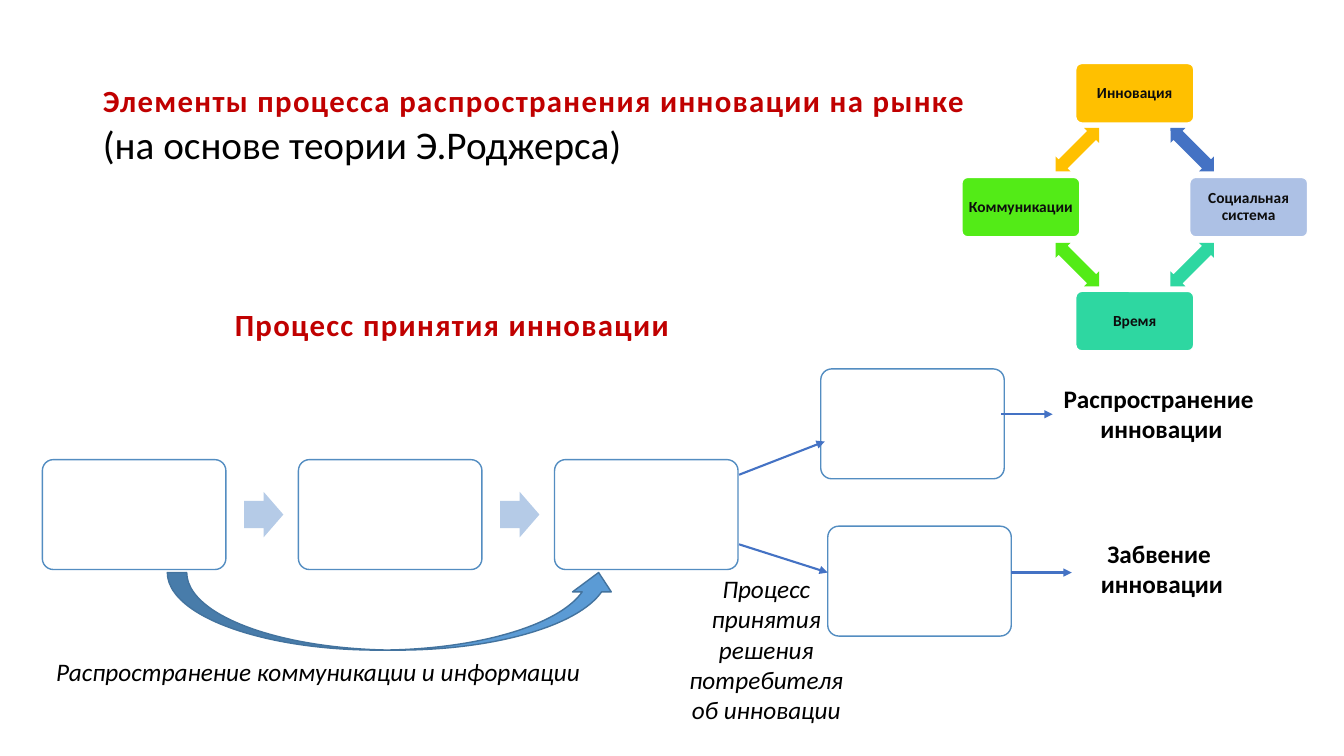
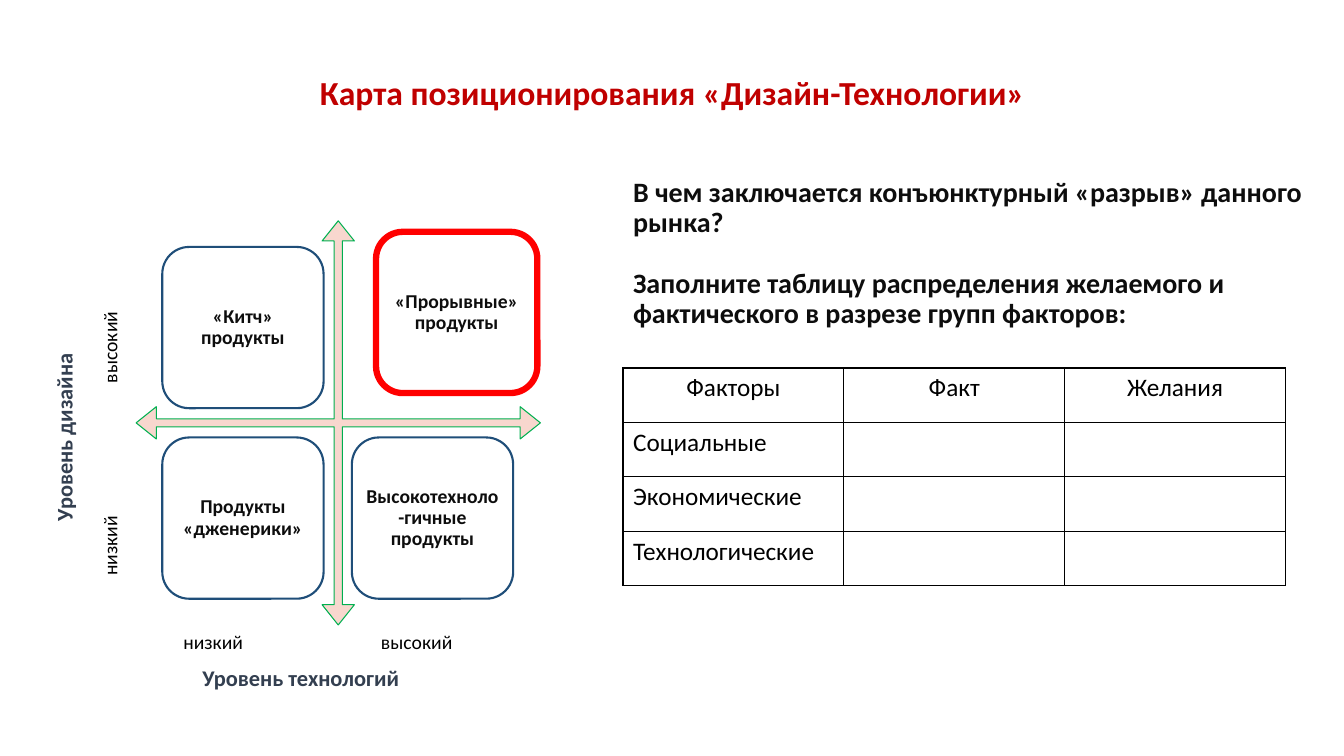
from lxml import etree
from pptx import Presentation
from pptx.dml.color import RGBColor
from pptx.enum.shapes import MSO_CONNECTOR, MSO_SHAPE as SHAPE
from pptx.enum.text import MSO_ANCHOR as ANCHOR, MSO_AUTO_SIZE, PP_ALIGN as ALIGN
from pptx.oxml import parse_xml
from pptx.oxml.ns import nsdecls, qn
from pptx.util import Pt

PX = 9144  # 100 px to the inch
FONT = "Calibri"
COLORS = {
    "title": "C00000", "black": "000000", "ink": "0D0D0D", "axis": "333F50",
    "white": "FFFFFF", "yellow": "FFC000", "lime": "53EB17", "teal": "2ED7A1",
    "lilac": "ADC1E5", "blue": "4472C4", "step": "538DC1", "step_arrow": "B5CBE7",
    "curve": "5B9BD5", "curve_line": "43739E", "cross": "F8D7CE", "green": "00B050",
    "navy": "1F4E79", "red": "FF0000",
}
TITLE_BOX = (92, 40, 1150, 145)


def write(text_frame, texts, size, color="black", bold=False, italic=False,
          align=ALIGN.LEFT, line_spacing=None, gap=0, spacing=0):
    """Put one paragraph per text into the frame and format it."""
    text_frame.text = "\n".join(texts)
    for index, paragraph in enumerate(text_frame.paragraphs):
        paragraph.alignment = align
        if line_spacing:
            paragraph.line_spacing = line_spacing
        if index and gap:
            paragraph.space_before = Pt(gap)
        for run in paragraph.runs:
            font = run.font
            font.name, font.size, font.bold, font.italic = FONT, Pt(size), bold, italic
            font.color.rgb = RGBColor.from_string(COLORS[color])
            if spacing:
                run._r.get_or_add_rPr().set("spc", str(spacing))


def add_block(slide, kind, box, fill=None, line=None, width=1, adjustments=(), rotation=0):
    shape = slide.shapes.add_shape(kind, *[value * PX for value in box])
    shape.shadow.inherit = False
    shape.rotation = rotation
    for index, value in enumerate(adjustments):
        shape.adjustments[index] = value
    if fill:
        shape.fill.solid()
        shape.fill.fore_color.rgb = RGBColor.from_string(COLORS[fill])
    else:
        shape.fill.background()
    if line:
        shape.line.color.rgb = RGBColor.from_string(COLORS[line])
        shape.line.width = Pt(width)
    else:
        shape.line.fill.background()
    return shape


presentation = Presentation()
presentation.slide_width, presentation.slide_height = 1333 * PX, 750 * PX

# Both slides share the title frame
slides = []
for number in range(2):
    slide = presentation.slides.add_slide(presentation.slide_layouts[5])
    title = slide.shapes.title
    title.left, title.top, title.width, title.height = [value * PX for value in TITLE_BOX]
    title.text_frame.vertical_anchor = ANCHOR.MIDDLE
    title.text_frame.word_wrap = True
    slides.append(slide)
diffusion, positioning = slides

# Slide 1: title with a smaller heading above a plain second line
title_frame = diffusion.shapes.title.text_frame
write(title_frame, ["Элементы процесса распространения инновации на рынке"], 22,
      "title", bold=True, line_spacing=0.9, spacing=100)
paragraph = title_frame.paragraphs[0]
for text, size in ((" ", 44), ("(на основе теории Э.Роджерса)", 28)):
    run = paragraph.add_run()
    run.text = text
    run.font.name, run.font.size = FONT, Pt(size)
    run.font.color.rgb = RGBColor.from_string(COLORS["black"])
    if text == " ":
        paragraph.add_line_break()

# Slide 1: cycle of four elements around a hub
HUB_X, HUB_Y, RADIUS = 1125, 205, 113
NODE_W, NODE_H = 117, 59
ARROW_W, ARROW_H = 61, 21
elements = [
    ("Инновация", "yellow", 0, -1),
    ("Коммуникации", "lime", -1, 0),
    ("Время", "teal", 0, 1),
    ("Социальная система", "lilac", 1, 0),
]
for text, color, x, y in elements:
    box = (HUB_X + x * RADIUS - NODE_W // 2, HUB_Y + y * RADIUS - NODE_H // 2, NODE_W, NODE_H)
    node = add_block(diffusion, SHAPE.ROUNDED_RECTANGLE, box, color, "white", 1, [0.1])
    frame = node.text_frame
    frame.margin_left = frame.margin_right = frame.margin_top = frame.margin_bottom = 4 * PX
    frame.word_wrap = True
    write(frame, [text], 11, "ink", bold=True, align=ALIGN.CENTER, line_spacing=0.9)
for color, x, y, rotation in (("yellow", -1, -1, 135), ("lime", -1, 1, 45),
                              ("teal", 1, 1, 315), ("blue", 1, -1, 225)):
    box = (HUB_X + x * 57 - ARROW_W // 2, HUB_Y + y * 57 - ARROW_H // 2, ARROW_W, ARROW_H)
    add_block(diffusion, SHAPE.LEFT_RIGHT_ARROW, box, color,
              adjustments=[0.6, 0.5], rotation=rotation)

# Slide 1: adoption steps, two outcomes and the arrows between steps
STEP_LEFT, STEP_TOP, STEP_PITCH = 42, 456, 254
step_places = [(STEP_LEFT + index * STEP_PITCH, STEP_TOP) for index in range(3)]
for left, top in step_places + [(814, 366), (821, 522)]:
    add_block(diffusion, SHAPE.ROUNDED_RECTANGLE, (left, top, 182, 109),
              "white", "step", 1, [0.1])
for left, top in step_places[:2]:
    add_block(diffusion, SHAPE.RIGHT_ARROW, (left + 200, top + 32, 39, 45),
              "step_arrow", adjustments=[0.6, 0.5])
add_block(diffusion, SHAPE.CURVED_UP_ARROW, (166, 568, 447, 77), "curve", "curve_line")

# Slide 1: thin arrows to the outcomes and their results
for ends in ((733, 471, 818, 438), (733, 540, 821, 568),
             (993, 411, 1044, 411), (1003, 568, 1063, 568)):
    connector = diffusion.shapes.add_connector(
        MSO_CONNECTOR.STRAIGHT, *[value * PX for value in ends])
    connector.line.color.rgb = RGBColor.from_string(COLORS["blue"])
    connector.line.width = Pt(1.5)
    etree.SubElement(connector.line._get_or_add_ln(), qn("a:tailEnd"), type="triangle")
    etree.SubElement(connector._element.spPr, qn("a:effectLst"))

# Slide 2: title sits above the middle of its frame
title_frame = positioning.shapes.title.text_frame
title_frame.margin_bottom = 42 * PX
write(title_frame, ["Карта позиционирования «Дизайн-Технологии»"], 24, "title",
      bold=True, align=ALIGN.CENTER, line_spacing=0.9)

# Slide 2: positioning map
add_block(positioning, SHAPE.QUAD_ARROW, (135, 219, 401, 401), "cross", "green", 0.75,
          [0.02, 0.04, 0.05])
quadrants = [
    ("«Китч» продукты", 161, 245, None, "navy", 1.5),
    ("«Прорывные» продукты", 373, 230, "white", "red", 4.5),
    ("Продукты «дженерики»", 161, 434, None, "navy", 1.5),
    ("Высокотехноло-гичные продукты", 349, 434, None, "navy", 1.5),
]
for text, left, top, fill, line, width in quadrants:
    quadrant = add_block(positioning, SHAPE.ROUNDED_RECTANGLE, (left, top, 160, 160),
                         fill, line, width)
    frame = quadrant.text_frame
    frame.margin_left = frame.margin_right = frame.margin_top = frame.margin_bottom = 6 * PX
    frame.word_wrap = True
    write(frame, [text], 14, "ink", bold=True, align=ALIGN.CENTER, line_spacing=0.9)

# Free text of both slides: slide, box, paragraphs, wrap, vertical, format
heading = dict(size=22, color="title", bold=True, spacing=100)
note = dict(size=18, italic=True)
result = dict(size=18, bold=True, align=ALIGN.CENTER)
axis = dict(size=16, color="axis", bold=True)
level = dict(size=14)
question = dict(size=20, color="ink", bold=True, line_spacing=0.9, gap=22)
labels = [
    (diffusion, (223, 298, 459, 47), ["Процесс принятия инновации"], False, False, heading),
    (diffusion, (46, 646, 540, 40), ["Распространение коммуникации и информации"],
     False, False, note),
    (diffusion, (667, 564, 186, 162),
     ["Процесс принятия решения", "потребителя об инновации"],
     True, False, dict(note, align=ALIGN.CENTER)),
    (diffusion, (1044, 375, 216, 71), ["Распространение ", "инновации"], False, False, result),
    (diffusion, (1081, 529, 143, 71), ["Забвение ", "инновации"], False, False, result),
    (positioning, (191, 654, 217, 37), ["Уровень технологий"], False, False, axis),
    (positioning, (45, 349, 47, 178), ["Уровень дизайна"], False, True, axis),
    (positioning, (172, 620, 80, 34), ["низкий"], False, False, level),
    (positioning, (92, 511, 44, 70), ["низкий"], False, True, level),
    (positioning, (368, 620, 92, 34), ["высокий"], False, False, level),
    (positioning, (92, 308, 44, 82), ["высокий"], False, True, level),
    (positioning, (618, 173, 698, 158),
     ["В чем заключается конъюнктурный «разрыв» данного рынка?",
      "Заполните таблицу распределения желаемого и фактического в разрезе групп факторов:"],
     True, False, question),
]
for slide, box, texts, wrap, vertical, style in labels:
    frame = slide.shapes.add_textbox(*[value * PX for value in box]).text_frame
    frame.word_wrap = wrap
    if style is question:
        frame.vertical_anchor = ANCHOR.MIDDLE
    else:
        frame.auto_size = MSO_AUTO_SIZE.SHAPE_TO_FIT_TEXT
    if vertical:
        frame._txBody.bodyPr.set("vert", "vert270")
    write(frame, texts, **style)

# Slide 2: table of factors
rows = [
    ("Факторы", "Факт", "Желания"),
    ("Социальные", "", ""),
    ("Экономические", "", ""),
    ("Технологические", "", ""),
]
table = positioning.shapes.add_table(
    len(rows), 3, 618 * PX, 365 * PX, 657 * PX, 216 * PX).table
table.first_row = table.horz_banding = False
for row_index, row in enumerate(rows):
    for column_index, text in enumerate(row):
        cell = table.cell(row_index, column_index)
        write(cell.text_frame, [text], 18,
              align=ALIGN.LEFT if row_index else ALIGN.CENTER)
        properties = cell._tc.get_or_add_tcPr()
        for side in ("lnL", "lnR", "lnT", "lnB"):
            properties.append(parse_xml(
                f'<a:{side} {nsdecls("a")} w="12700"><a:solidFill>'
                f'<a:srgbClr val="{COLORS["black"]}"/></a:solidFill></a:{side}>'))
        cell.fill.background()

presentation.save("out.pptx")
